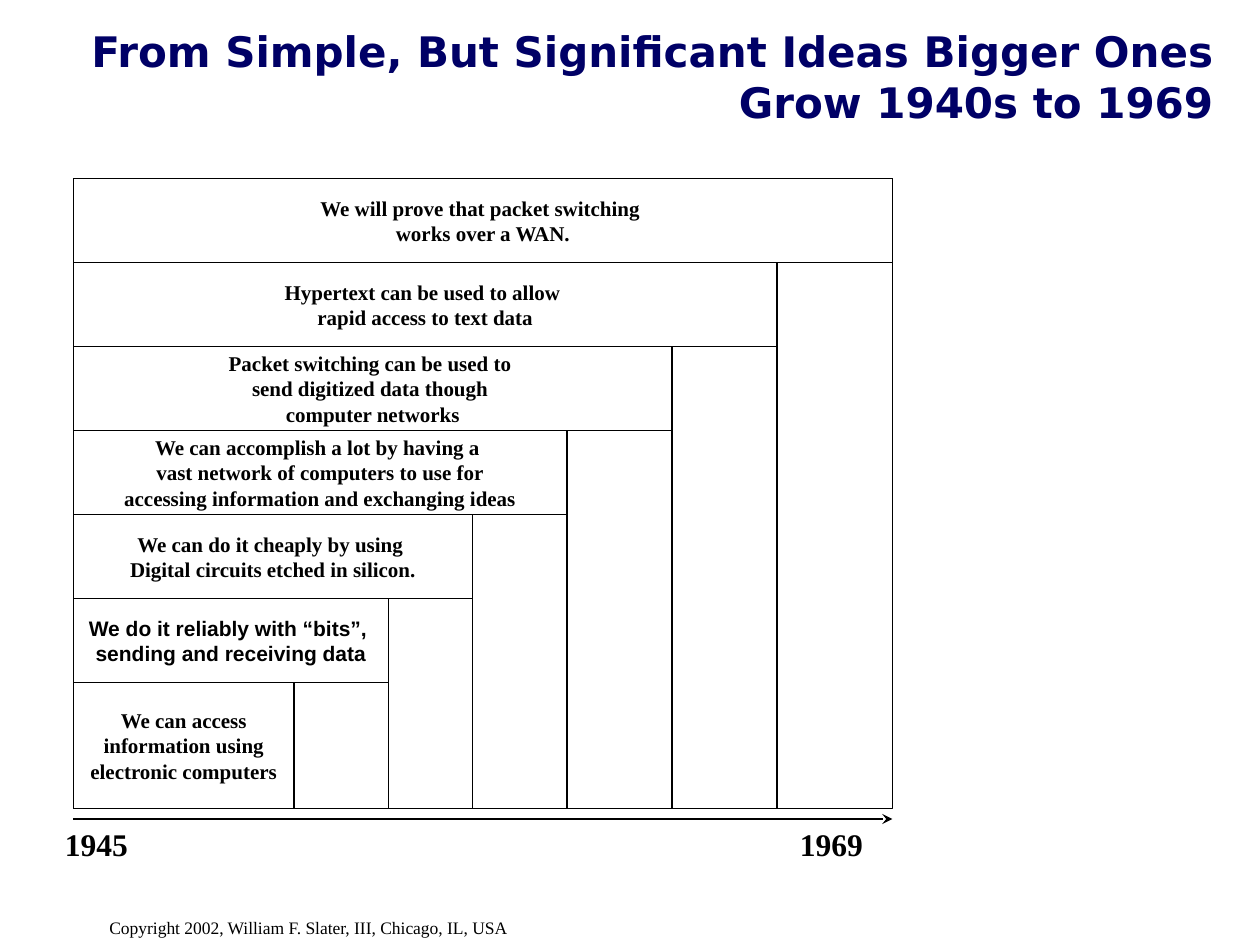
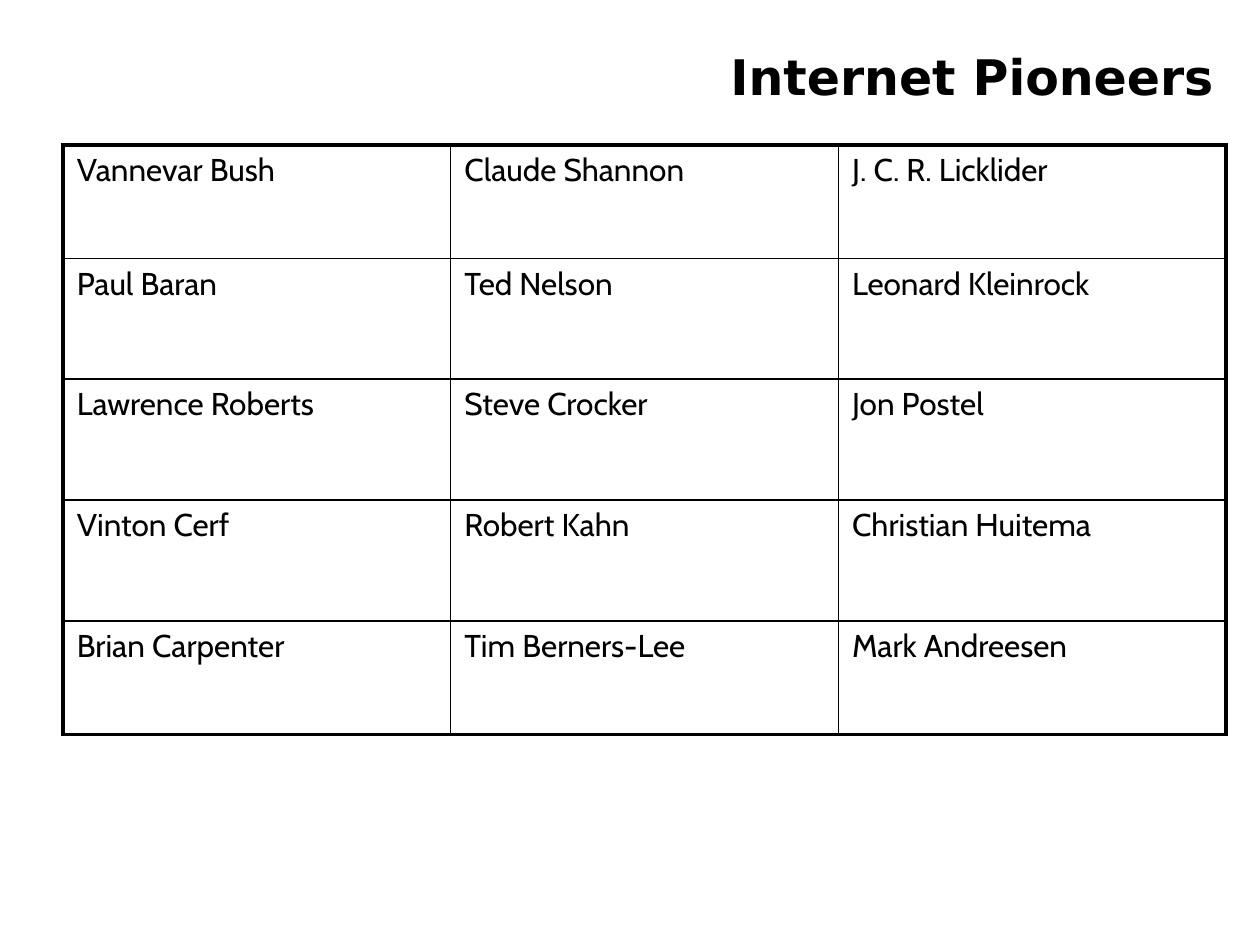
from dataclasses import dataclass

from lxml.etree import SubElement
from pptx import Presentation
from pptx.dml.color import RGBColor
from pptx.enum.shapes import MSO_CONNECTOR, MSO_SHAPE
from pptx.enum.text import MSO_ANCHOR, MSO_AUTO_SIZE, PP_ALIGN
from pptx.oxml.ns import qn
from pptx.util import Inches, Pt

COLORS = {"ink": "000000", "paper": "FFFFFF", "navy": "000066"}
UNIT = Inches(10) / 120
TITLE_ONLY_LAYOUT = 5

SERIF = "Times New Roman"
TITLE_FRAME = {"vertical_anchor": MSO_ANCHOR.MIDDLE, "word_wrap": True,
               "auto_size": MSO_AUTO_SIZE.NONE}
STEP_FRAME = {"vertical_anchor": MSO_ANCHOR.MIDDLE, "word_wrap": False}
LABEL_FRAME = {"word_wrap": False, "auto_size": MSO_AUTO_SIZE.SHAPE_TO_FIT_TEXT}
CELL_FORMAT = {"margin_left": Inches(0.11), "margin_right": Inches(0.11),
               "margin_top": Inches(0.05), "margin_bottom": Inches(0.05)}
TABLE_FORMAT = {"first_row": False, "horz_banding": False}
STEP_FONT = {"name": SERIF, "size": Pt(12), "bold": True}
YEAR_FONT = {"name": SERIF, "size": Pt(18), "bold": True}
FOOTER_FONT = {"name": SERIF, "size": Pt(10)}
CELL_FONT = {"name": "Cabin", "size": Pt(18), "bold": False}

STEP_HEIGHT = 8
STEPS = [
    (78, ["We will prove that packet switching ", "works over a WAN."], SERIF),
    (67, ["Hypertext can be used to allow ", "rapid access to text data"], SERIF),
    (57, ["Packet switching can be used to ", "send digitized data though ",
          "computer networks"], SERIF),
    (47, ["We can accomplish a lot by having a ",
          "vast network of computers to use for",
          "accessing information and exchanging ideas"], SERIF),
    (38, ["We can do it cheaply by using ",
          "Digital circuits etched in silicon."], SERIF),
    (30, ["We do it reliably with “bits”, ", "sending and receiving data"], "Arial"),
    (21, ["We can access", " information using ", "electronic computers"], SERIF),
]
PIONEERS = [
    ["Vannevar Bush", "Claude Shannon", "J. C. R. Licklider"],
    ["Paul Baran", "Ted Nelson", "Leonard Kleinrock"],
    ["Lawrence Roberts", "Steve Crocker", "Jon Postel"],
    ["Vinton Cerf", "Robert Kahn", "Christian Huitema"],
    ["Brian Carpenter", "Tim Berners-Lee", "Mark Andreesen"],
]
ROW_SHARES = [0.9, 0.96, 0.96, 0.96, 0.9]


@dataclass
class Box:
    left: float
    top: float
    width: float
    height: float

    def inside(self, left, top, width, height):
        return Box(self.left + left, self.top + top, width, height)

    def lengths(self):
        return [round(value * UNIT)
                for value in (self.left, self.top, self.width, self.height)]


SLIDE_BOX = Box(0, 0, 120, 90)
TITLE_BOX = SLIDE_BOX.inside(6, 3.6, 110.76, 7.32)
DIAGRAM_BOX = SLIDE_BOX.inside(7, 17, 78, 60)
FOOTER_BOX = SLIDE_BOX.inside(9.24, 86.76, 40.8, 3.24)
TABLE_BOX = SLIDE_BOX.inside(6, 13.8, 110.76, 56.16)


def color(name):
    return RGBColor.from_string(COLORS[name])


def set_formats(target, formats):
    for attribute, value in formats.items():
        setattr(target, attribute, value)


def write_lines(text_frame, lines, font, alignment=PP_ALIGN.LEFT, ink="ink"):
    for index, line in enumerate(lines):
        paragraph = text_frame.add_paragraph() if index else text_frame.paragraphs[0]
        paragraph.alignment = alignment
        run = paragraph.add_run()
        run.text = line
        set_formats(run.font, font)
        run.font.color.rgb = color(ink)


def add_titled_slide(presentation, title, size, ink):
    slide = presentation.slides.add_slide(presentation.slide_layouts[TITLE_ONLY_LAYOUT])
    shape = slide.shapes.title
    set_formats(shape, dict(zip(("left", "top", "width", "height"), TITLE_BOX.lengths())))
    set_formats(shape.text_frame, TITLE_FRAME)
    font = {"name": "DejaVu Sans", "size": Pt(size), "bold": True}
    write_lines(shape.text_frame, [title], font, PP_ALIGN.RIGHT, ink)
    return slide


def add_label(slide, box, text, font):
    label = slide.shapes.add_textbox(*box.lengths())
    set_formats(label.text_frame, LABEL_FRAME)
    write_lines(label.text_frame, [text], font)


def add_panel(slide, box):
    panel = slide.shapes.add_shape(MSO_SHAPE.RECTANGLE, *box.lengths())
    panel.shadow.inherit = False
    panel.fill.solid()
    panel.fill.fore_color.rgb = color("paper")
    panel.line.color.rgb = color("ink")
    panel.line.width = Pt(0.75)
    return panel


def add_steps(slide, box):
    last = len(STEPS) - 1
    for index, (width, _, _) in enumerate(STEPS[:last]):
        top = index * STEP_HEIGHT
        add_panel(slide, box.inside(0, top, width, box.height - top))
    for index, (width, lines, font_name) in enumerate(STEPS):
        top = index * STEP_HEIGHT
        height = box.height - top if index == last else STEP_HEIGHT
        panel = add_panel(slide, box.inside(0, top, width, height))
        set_formats(panel.text_frame, STEP_FRAME)
        write_lines(panel.text_frame, lines, {**STEP_FONT, "name": font_name},
                    PP_ALIGN.CENTER)


def add_timeline(slide, box):
    axis_top = box.height + 1
    left, top, width, _ = box.inside(0, axis_top, box.width, 0).lengths()
    axis = slide.shapes.add_connector(MSO_CONNECTOR.STRAIGHT, left, top, left + width, top)
    axis.line.color.rgb = color("ink")
    axis.line.width = Pt(0.75)
    SubElement(axis.line._get_or_add_ln(), qn("a:tailEnd"), type="stealth")
    SubElement(axis._element.spPr, qn("a:effectLst"))
    for year, offset in (("1945", -2), ("1969", 68)):
        add_label(slide, box.inside(offset, axis_top, 8.5, 4.8), year, YEAR_FONT)


def set_cell_borders(cell, widths):
    properties = cell._tc.get_or_add_tcPr()
    for side, width in widths.items():
        line = SubElement(properties, qn(f"a:ln{side}"), w=str(Pt(width)))
        fill = SubElement(line, qn("a:solidFill"))
        SubElement(fill, qn("a:srgbClr"), val=COLORS["ink"])


def add_name_table(slide, box, names):
    row_count, column_count = len(names), len(names[0])
    table = slide.shapes.add_table(row_count, column_count, *box.lengths()).table
    set_formats(table, TABLE_FORMAT)
    for row, share in zip(table.rows, ROW_SHARES):
        row.height = round(box.height * UNIT * share / sum(ROW_SHARES))
    for row, row_names in enumerate(names):
        for column, name in enumerate(row_names):
            cell = table.cell(row, column)
            set_formats(cell, CELL_FORMAT)
            write_lines(cell.text_frame, [name], CELL_FONT)
            outer_sides = {"L": column == 0, "R": column == column_count - 1,
                           "T": row == 0, "B": row == row_count - 1}
            set_cell_borders(cell, {side: 2.25 if outer else 1
                                    for side, outer in outer_sides.items()})
            cell.fill.background()


def build_ideas_slide(presentation):
    slide = add_titled_slide(
        presentation,
        "From Simple, But Significant Ideas Bigger Ones Grow 1940s to 1969", 24, "navy")
    add_steps(slide, DIAGRAM_BOX)
    add_timeline(slide, DIAGRAM_BOX)
    add_label(slide, FOOTER_BOX,
              "Copyright 2002, William F. Slater, III, Chicago, IL, USA", FOOTER_FONT)


def build_pioneers_slide(presentation):
    slide = add_titled_slide(presentation, "Internet Pioneers", 28, "ink")
    add_name_table(slide, TABLE_BOX, PIONEERS)


def main():
    presentation = Presentation()
    set_formats(presentation, {"slide_width": Inches(10), "slide_height": Inches(7.5)})
    build_ideas_slide(presentation)
    build_pioneers_slide(presentation)
    presentation.save("out.pptx")


if __name__ == "__main__":
    main()
